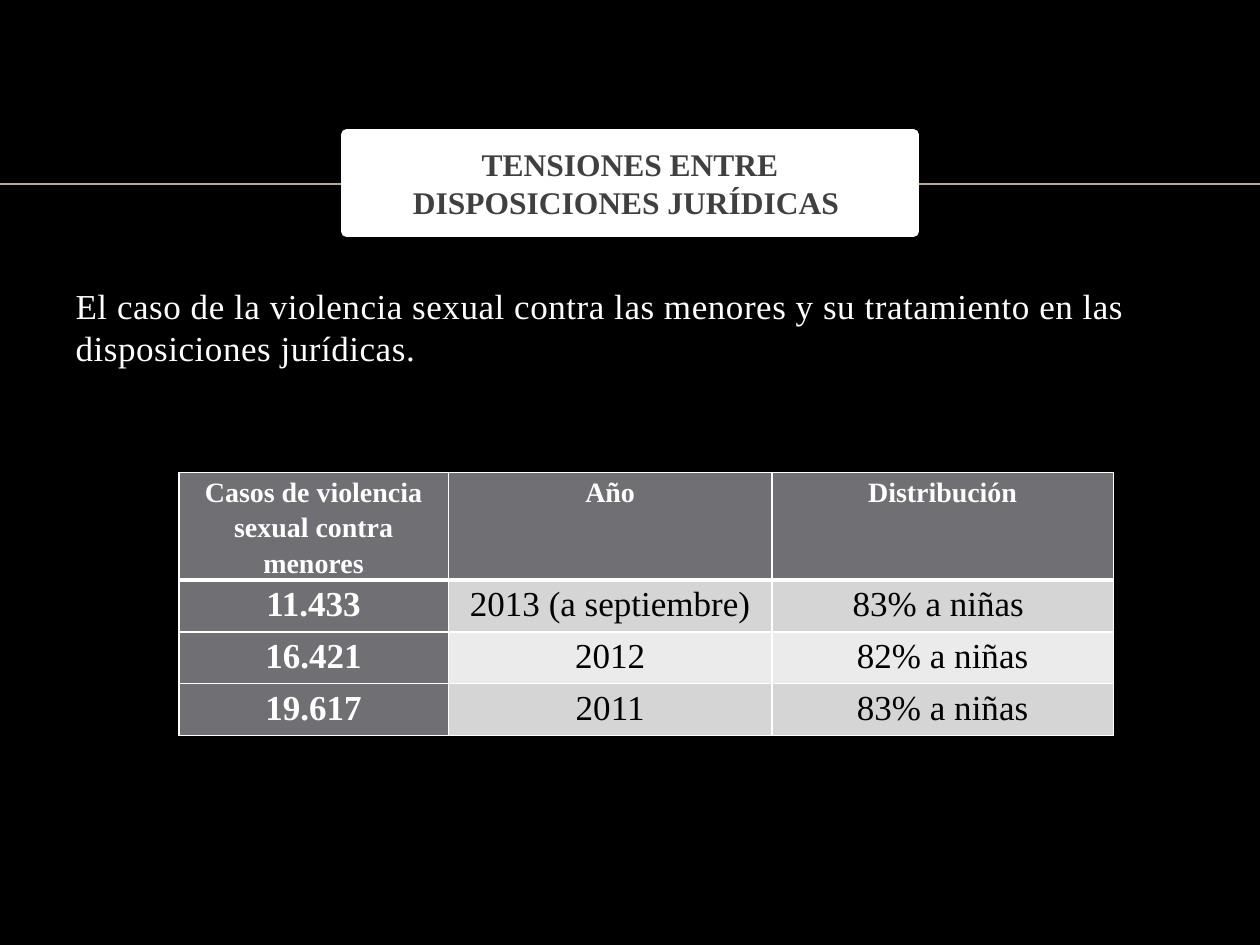
from dataclasses import dataclass

from lxml import etree
from pptx import Presentation
from pptx.dml import color as dml
from pptx.enum import shapes, text
from pptx.oxml import ns
from pptx.util import Pt

FONT = "Times New Roman"
COLORS = {
    "background": "000000", "white": "FFFFFF", "rule": "BBAA8A",
    "title": "404040", "header": "6F6F74", "odd": "D5D5D6",
    "even": "EBEBEB", "dark": "000000",
}
HEADINGS = ("Casos de violencia sexual contra menores", "Año", "Distribución")
COLUMN_WIDTHS = (154, 185, 195)
HEADER_HEIGHT, ROW_HEIGHT = 61.2, 29.7


@dataclass
class YearCases:
    cases: str
    year: str
    share: str


YEARS = (
    YearCases("11.433", "2013 (a septiembre)", "83% a niñas "),
    YearCases("16.421", "2012", "82% a niñas"),
    YearCases("19.617", "2011", "83% a niñas"),
)


def rgb(name: str) -> dml.RGBColor:
    return dml.RGBColor.from_string(COLORS[name])


def paint(fill, name: str) -> None:
    fill.solid()
    fill.fore_color.rgb = rgb(name)


def write(frame, words: str, *, size: float, color: str, bold=False,
          align=text.PP_ALIGN.LEFT, before=0, line_spacing=1.0, tracking=0):
    """Fill the first paragraph of a text frame and format it."""
    para = frame.paragraphs[0]
    para.alignment = align
    para.space_before = Pt(before)
    para.line_spacing = line_spacing
    span = para.add_run()
    span.text = words
    span.font.name, span.font.size, span.font.bold = FONT, Pt(size), bold
    span.font.color.rgb = rgb(color)
    if tracking:
        span.font._element.set("spc", str(round(tracking * 100)))
    return para


def place(box, left: float, top: float, width: float, height: float) -> None:
    box.left, box.top = Pt(left), Pt(top)
    box.width, box.height = Pt(width), Pt(height)


def set_borders(cell, **widths: float) -> None:
    """Draw white borders; the keywords are L, R, T and B, in points."""
    properties = cell._tc.get_or_add_tcPr()
    for index, (side, width) in enumerate(widths.items()):
        line = etree.Element(ns.qn(f"a:ln{side}"), w=str(Pt(width)))
        fill = etree.SubElement(line, ns.qn("a:solidFill"))
        etree.SubElement(fill, ns.qn("a:srgbClr"), val=COLORS["white"])
        properties.insert(index, line)


def fill_cell(cell, words: str, *, fill: str, size: float, color: str,
              bold: bool, top=1, bottom=1) -> None:
    cell.margin_left = cell.margin_right = Pt(5)
    cell.margin_top = cell.margin_bottom = 0
    paint(cell.fill, fill)
    set_borders(cell, L=1, R=1, T=top, B=bottom)
    write(cell.text_frame, words, size=size, color=color, bold=bold,
          align=text.PP_ALIGN.CENTER, line_spacing=1.15)


def add_title(page) -> None:
    box = page.shapes.title
    place(box, 198, 77, 324, 55.4)
    paint(box.fill, "white")
    box.line.color.rgb = rgb("white")
    box.line.width = Pt(6)
    frame = box.text_frame
    frame.word_wrap = True
    frame.auto_size = text.MSO_AUTO_SIZE.NONE
    frame.vertical_anchor = text.MSO_ANCHOR.MIDDLE
    write(frame, "TENSIONES ENTRE DISPOSICIONES JURÍDICAS ", size=18,
          color="title", bold=True, align=text.PP_ALIGN.CENTER, before=4)


def add_rule(page, width: float) -> None:
    """Run a line across the page, behind the title."""
    rule = page.shapes.add_connector(
        shapes.MSO_CONNECTOR.STRAIGHT, 0, Pt(105), Pt(width), Pt(105))
    rule.line.color.rgb = rgb("rule")
    rule.line.width = Pt(1)
    etree.SubElement(rule._element.spPr, ns.qn("a:effectLst"))
    page.shapes.title._element.addprevious(rule._element)


def add_body(page) -> None:
    box = page.placeholders[1]
    place(box, 36, 159, 648, 321)
    box.text_frame.auto_size = text.MSO_AUTO_SIZE.NONE
    para = write(
        box.text_frame,
        "El caso de la violencia sexual contra las menores y su tratamiento "
        "en las disposiciones jurídicas.",
        size=20, color="white", before=6, tracking=0.3)
    properties = para._p.get_or_add_pPr()
    properties.set("marL", "0")
    properties.set("indent", "0")
    etree.SubElement(properties, ns.qn("a:buNone"))


def add_cases_table(page) -> None:
    height = HEADER_HEIGHT + ROW_HEIGHT * len(YEARS)
    table = page.shapes.add_table(
        len(YEARS) + 1, len(HEADINGS), Pt(102.2), Pt(270),
        Pt(sum(COLUMN_WIDTHS)), Pt(height)).table
    for column, width in zip(table.columns, COLUMN_WIDTHS):
        column.width = Pt(width)
    for index, row in enumerate(table.rows):
        row.height = Pt(ROW_HEIGHT if index else HEADER_HEIGHT)

    # Header row
    for column, heading in enumerate(HEADINGS):
        fill_cell(table.cell(0, column), heading, fill="header", size=16,
                  color="white", bold=True, bottom=3)

    # One row a year, with a dark first column and banded values
    for index, entry in enumerate(YEARS, start=1):
        band = "odd" if index % 2 else "even"
        top = 3 if index == 1 else 1
        fill_cell(table.cell(index, 0), entry.cases, fill="header", size=20,
                  color="white", bold=True, top=top)
        for column, value in enumerate((entry.year, entry.share), start=1):
            fill_cell(table.cell(index, column), value, fill=band, size=20,
                      color="dark", bold=False, top=top)


def main() -> None:
    deck = Presentation()
    deck.slide_width, deck.slide_height = Pt(720), Pt(540)
    page = deck.slides.add_slide(deck.slide_layouts[1])
    paint(page.background.fill, "background")
    add_title(page)
    add_rule(page, 720)
    add_body(page)
    add_cases_table(page)
    deck.save("out.pptx")


if __name__ == "__main__":
    main()
